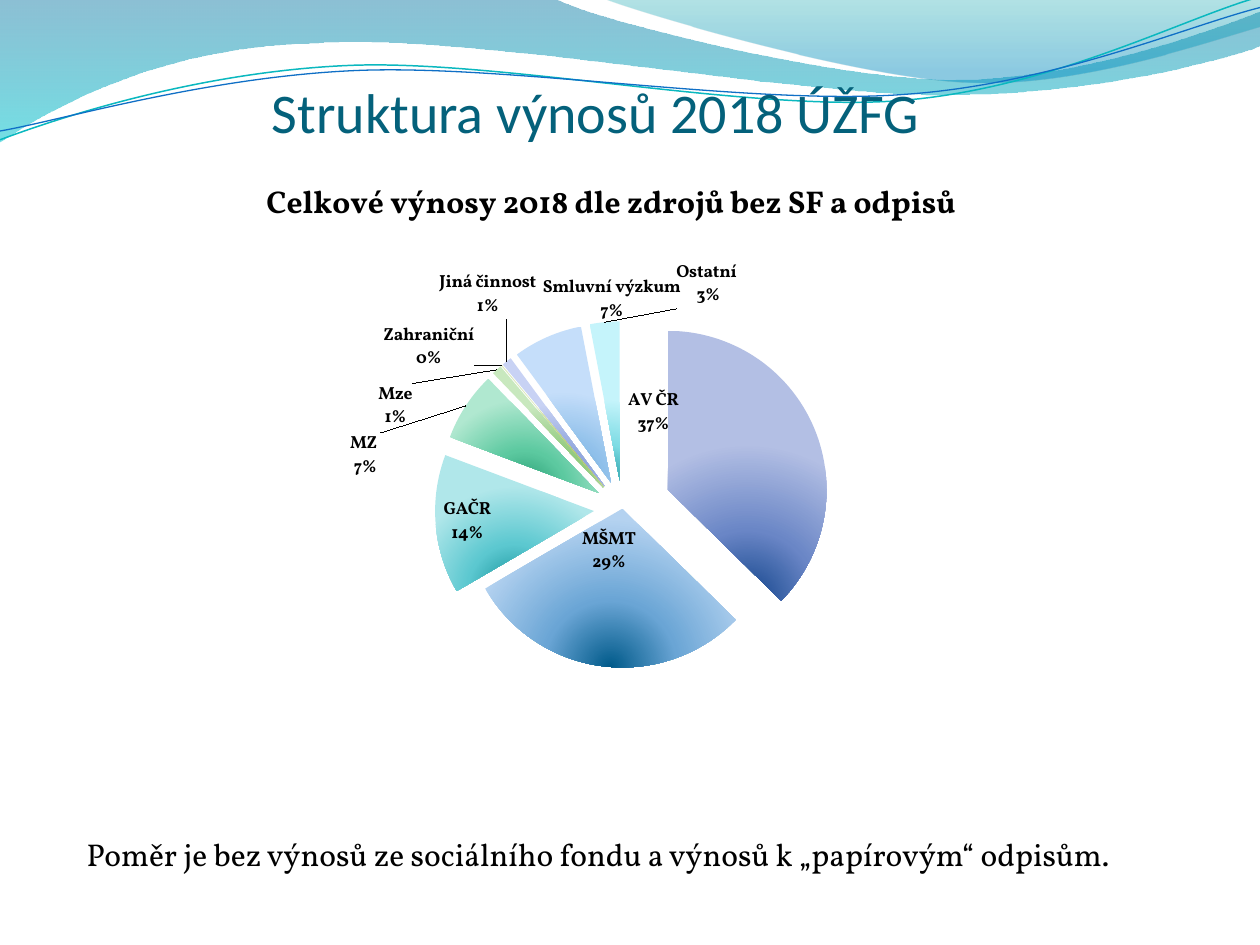
"""Slide with a wave header and an exploded pie of the 2018 revenue structure."""
from pptx import Presentation
from pptx.chart.data import CategoryChartData
from pptx.dml.color import RGBColor
from pptx.enum.chart import XL_CHART_TYPE as CT, XL_LABEL_POSITION as LP
from pptx.enum.text import MSO_ANCHOR as MA, PP_ALIGN as PA
from pptx.oxml import parse_xml
from pptx.oxml.ns import nsdecls, qn
from pptx.util import Inches, Pt

BLACK = RGBColor(0x00, 0x00, 0x00)
TITLE = RGBColor(0x04, 0x61, 0x7B)
TEAL = RGBColor(0x0A, 0xB8, 0xBF)
BLUE = RGBColor(0x0F, 0x6F, 0xC6)
LINEAR = '<a:lin ang="5400000" scaled="0"/>'
RADIAL = '<a:path path="circle"><a:fillToRect l="50000" t="100000" r="50000" b="0"/></a:path>'


def set_gradient(fill, stops, shade):
    fill.solid()
    gs = "".join(f'<a:gs pos="{pos * 1000}"><a:srgbClr val="{color}">'
                 f'<a:alpha val="{alpha * 1000}"/></a:srgbClr></a:gs>'
                 for pos, color, alpha in stops)
    grad = parse_xml(f'<a:gradFill {nsdecls("a")} rotWithShape="1"><a:gsLst>{gs}</a:gsLst>'
                     f'{shade}</a:gradFill>')
    solid = fill._xPr.find(qn("a:solidFill"))
    solid.getparent().replace(solid, grad)


def add_curve(slide, start, segs, closed):
    pts = [(x * 1000, y * 1000) for seg in segs for x, y in zip(seg[::2], seg[1::2])]
    fb = slide.shapes.build_freeform(start[0] * 1000, start[1] * 1000, scale=Inches(1) / 1000)
    fb.add_line_segments(pts, close=closed)
    s = fb.convert_to_shape()
    lines = iter(s._element.findall(".//" + qn("a:lnTo")))
    for seg in segs:
        group = [next(lines) for _ in range(len(seg) // 2)]
        if len(group) == 3:
            curve = parse_xml(f'<a:cubicBezTo {nsdecls("a")}/>')
            group[0].addprevious(curve)
            for line in group:
                curve.append(line[0])
                line.getparent().remove(line)
    s.shadow.inherit = False
    return s


prs = Presentation()
prs.slide_width, prs.slide_height = Inches(10), Inches(7.5)
slide = prs.slides.add_slide(prs.slide_layouts[6])

waves = [
    dict(start=(0, 0), segs=[(4.4, -0.01), (4.76, 0.17, 6.64, 0.63, 7.58, 0.63),
                             (8.53, 0.63, 9.58, 0.26, 10, 0.09), (10.01, 0.36),
                             (9.83, 0.44, 8.7, 0.76, 7.46, 0.75),
                             (6.22, 0.75, 3.82, 0.28, 2.57, 0.34),
                             (1.29, 0.36, 0.46, 0.83, -0.01, 1.13)],
         stops=[(0, RGBColor(0x00, 0x74, 0xA1), 45), (100, RGBColor(0x00, 0xC6, 0xCF), 55)]),
    dict(start=(4.79, -0.01), segs=[(5.09, 0.11, 6.82, 0.62, 7.69, 0.65),
                                    (8.56, 0.69, 9.61, 0.32, 10, 0.21), (10, 0)],
         stops=[(0, RGBColor(0x00, 0xA1, 0xA9), 30), (80, RGBColor(0x00, 0x8B, 0xBF), 45)]),
    dict(start=(0, 1.11), segs=[(0.48, 0.93, 1.58, 0.57, 2.77, 0.52),
                                (3.95, 0.47, 5.93, 0.89, 7.13, 0.8),
                                (8.33, 0.71, 9.38, 0.15, 9.98, -0.02)],
         line=(TEAL, 0.85)),
    dict(start=(0, 1.04), segs=[(0.47, 0.96, 1.64, 0.61, 2.83, 0.56),
                                (4.03, 0.51, 5.97, 0.84, 7.17, 0.75),
                                (8.36, 0.67, 9.41, 0.21, 10, 0.06)],
         line=(BLUE, 0.75)),
]
for wave in waves:
    s = add_curve(slide, wave["start"], wave["segs"], "stops" in wave)
    if "stops" in wave:
        set_gradient(s.fill, wave["stops"], LINEAR)
        s.line.fill.background()
    else:
        s.fill.background()
        s.line.color.rgb, width = wave["line"]
        s.line.width = Pt(width)

texts = [
    ("Struktura výnosů 2018 ÚŽFG", (0.2, 0.21, 9.06, 0.94), TITLE, PA.CENTER,
     dict(vertical_anchor=MA.BOTTOM, margin_left=0, margin_right=0, margin_bottom=0),
     dict(name="Calibri", size=Pt(32))),
    ("Poměr je bez výnosů ze sociálního fondu a výnosů k „papírovým“ odpisům.",
     (0.59, 6.58, 8.9, 0.4), BLACK, PA.LEFT, {}, dict(name="Vollkorn", size=Pt(18))),
]
for text, box, color, align, frame, font in texts:
    tf = slide.shapes.add_textbox(*map(Inches, box)).text_frame
    tf.word_wrap = True
    for key, value in frame.items():
        setattr(tf, key, value)
    p = tf.paragraphs[0]
    p.alignment = align
    r = p.add_run()
    r.text = text
    r.font.color.rgb = color
    for key, value in font.items():
        setattr(r.font, key, value)

slices = [
    ("AV ČR", 37, 31, (-0.17, 0.02), "10438A", "6A86C6", "B3BFE4"),
    ("MŠMT", 29, 0, (0.03, -0.24), "005A8A", "6AA5D5", "B4D2F0"),
    ("GAČR", 14, 18, None, "0F8F98", "5CC8D0", "B0E7EA"),
    ("MZ ", 7, 18, (-0.07, 0.13), "1F966B", "5CC9A0", "B0E8D0"),
    ("Mze", 1, 18, (-0.07, 0.11), "4F8A38", "8FC87A", "C8E8BE"),
    ("Zahraniční", 0.1, 18, (-0.02, 0.02), "6F8A20", "AFC76A", "DCE8BC"),
    ("Jiná činnost", 1, 18, (0.03, -0.06), "4060B0", "8FA5DC", "C8D2F4"),
    ("Smluvní výzkum", 7, 18, (0.12, -0.01), "3A80B8", "8FC0EA", "C5DEFA"),
    ("Ostatní ", 3, 18, (0.12, -0.01), "209AA2", "7EDCE4", "C5F4FB"),
]
data = CategoryChartData()
data.categories = [row[0] for row in slices]
data.add_series("Series 1", [row[1] for row in slices])
chart = slide.shapes.add_chart(CT.PIE, Inches(0.35), Inches(1.23), Inches(9), Inches(4.8),
                               data).chart
chart.has_legend = False
chart.font.name, chart.font.size, chart.font.color.rgb = "Vollkorn", Pt(10), BLACK
chart.has_title = True
tf = chart.chart_title.text_frame
tf.text = "Celkové výnosy 2018 dle zdrojů bez SF a odpisů"
font = tf.paragraphs[0].runs[0].font
for key, value in dict(name="Vollkorn", size=Pt(18), bold=True).items():
    setattr(font, key, value)
font.color.rgb = BLACK

layout_xml = '<c:layout {}><c:manualLayout>{}</c:manualLayout></c:layout>'
area = chart._chartSpace.find(".//" + qn("c:plotArea"))
for old in area.findall(qn("c:layout")):
    area.remove(old)
modes = '<c:layoutTarget val="inner"/><c:xMode val="edge"/><c:yMode val="edge"/>'
sizes = "".join(f'<c:{k} val="{v}"/>' for k, v in dict(x=0.37, y=0.32, w=0.28, h=0.53).items())
area.insert(0, parse_xml(layout_xml.format(nsdecls("c"), modes + sizes)))

plot = chart.plots[0]
plot.vary_by_categories = True
ser = plot.series[0]
labels = ser.data_labels
labels.number_format, labels.number_format_is_linked = "0%", False
holders = [(labels, labels._element)]
for i, (_, _, explode, offset, dark, mid, light) in enumerate(slices):
    fmt = ser.points[i].format
    set_gradient(fmt.fill, [(0, dark, 100), (45, mid, 100), (100, light, 100)], RADIAL)
    fmt.line.fill.background()
    explosion = parse_xml(f'<c:explosion {nsdecls("c")} val="{explode}"/>')
    fmt.fill._xPr.addprevious(explosion)
    if offset:
        label = ser.points[i].data_label
        label.font.bold = True
        el = label._dLbl
        xy = '<c:x val="{}"/><c:y val="{}"/>'.format(*offset)
        el.find(qn("c:idx")).addnext(parse_xml(layout_xml.format(nsdecls("c"), xy)))
        holders.append((label, el))
for label, el in holders:
    for key, value in dict(name="Vollkorn", size=Pt(10), bold=True).items():
        setattr(label.font, key, value)
    label.font.color.rgb = BLACK
    label.position = LP.BEST_FIT
    for tag, value in dict(showVal=0, showCatName=1, showPercent=1).items():
        el.find(qn("c:" + tag)).set("val", str(value))
    sep = parse_xml(f'<c:separator {nsdecls("c")}>\n</c:separator>')
    last = el.find(qn("c:showBubbleSize"))
    (el.find(qn("c:showPercent")) if last is None else last).addnext(sep)

prs.save("out.pptx")
